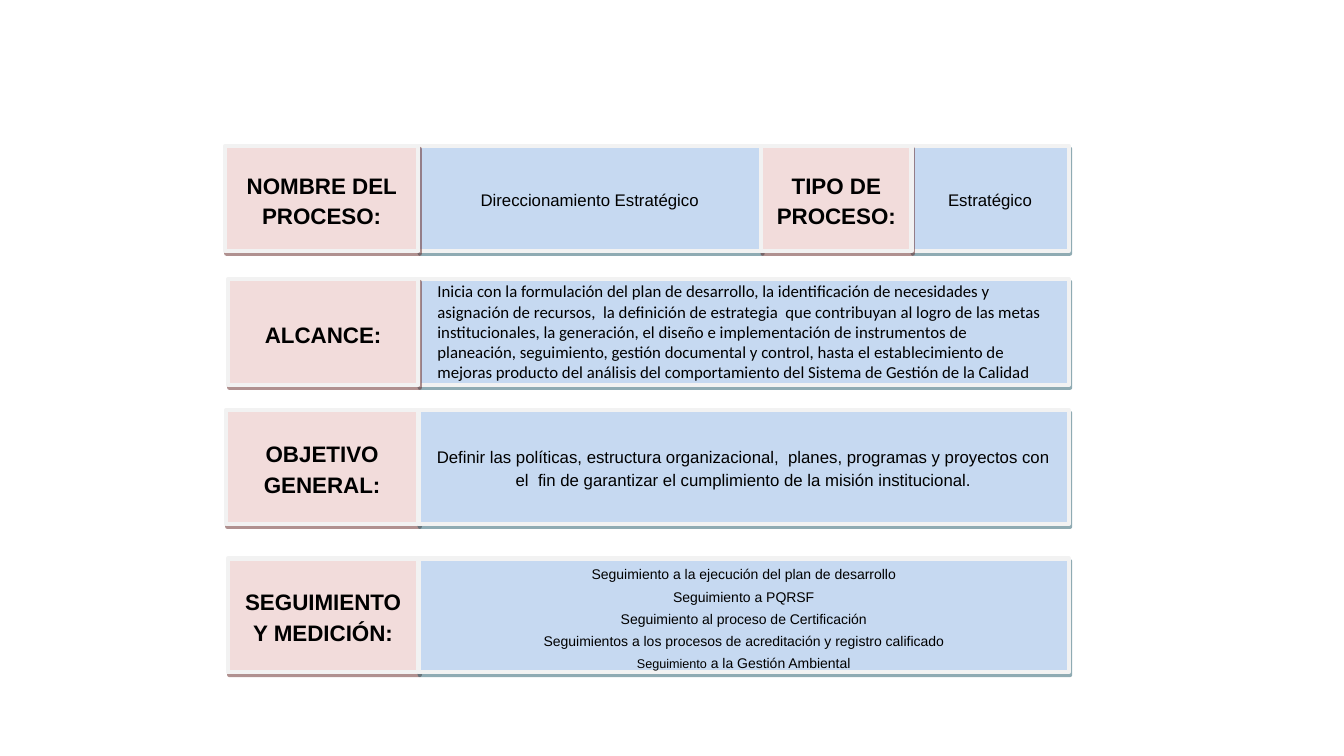
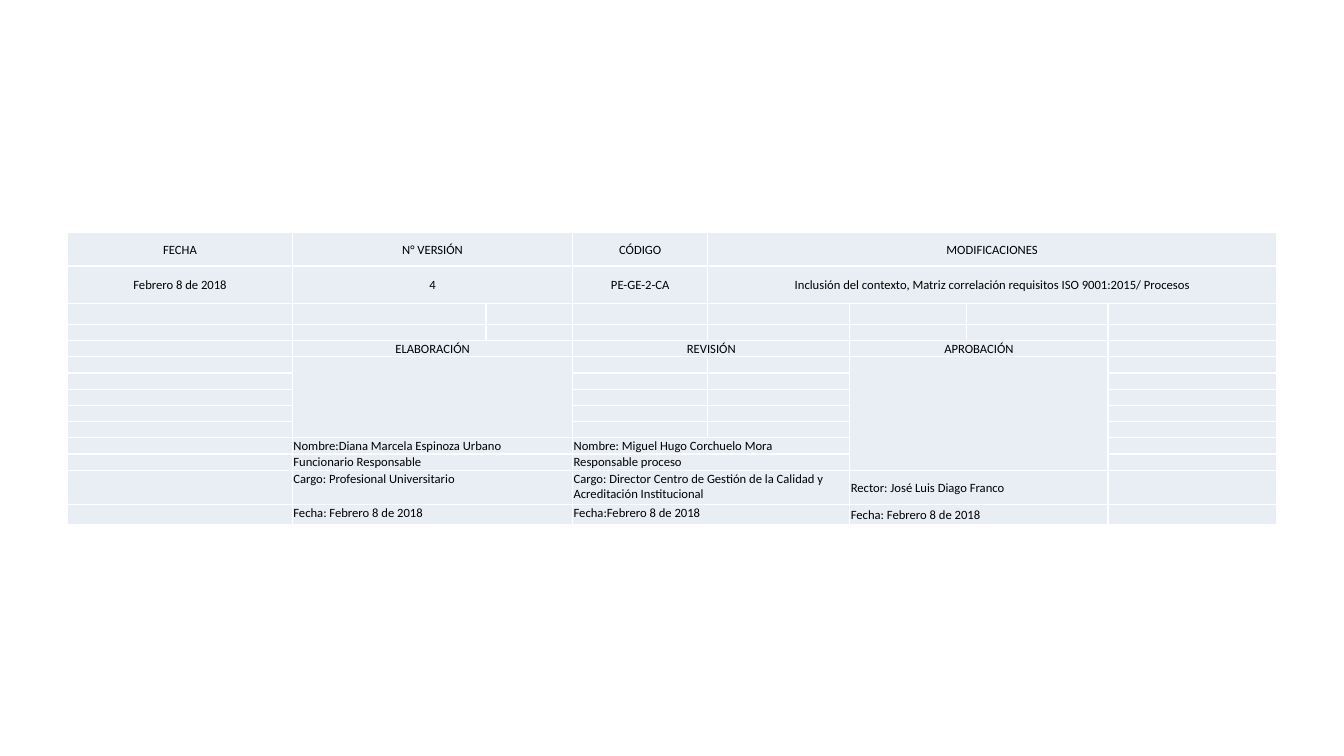
from dataclasses import dataclass

from lxml import etree
from pptx import Presentation
from pptx import util as u
from pptx.dml.color import RGBColor
from pptx.enum import shapes, text
from pptx.oxml import ns


@dataclass(frozen=True)
class Theme:
    ink: str = "000000"
    frame: str = "F2F2F2"
    label_fill: str = "F2DCDB"
    label_shadow: str = "632523"
    value_fill: str = "C6D9F1"
    value_shadow: str = "215968"
    cell_fill: str = "E9EDF4"
    cell_border: str = "FFFFFF"
    card_font: str = "Arial"
    body_font: str = "Calibri"
    label_size: float = 16
    value_size: float = 12
    list_size: float = 10
    small_size: float = 9
    card_spacing: float = 1.15


THEME = Theme()
CENTER, LEFT = text.PP_ALIGN.CENTER, text.PP_ALIGN.LEFT
MIDDLE, TOP = text.MSO_ANCHOR.MIDDLE, text.MSO_ANCHOR.TOP

# Process card grid: column edges, and top and height of each row, in inches
VALUE_LEFT, TYPE_LEFT, TYPE_VALUE_LEFT, CARD_RIGHT = 4.15, 7.55, 9.04, 10.6
NAME, SCOPE, GOAL, FOLLOW_UP = (1.45, 1.04), (2.77, 1.05), (4.07, 1.13), (5.54, 1.13)

SCOPE_TEXT = (
    "Inicia con la formulación del plan de desarrollo, la identificación de "
    "necesidades y asignación de recursos,  la definición de estrategia  que "
    "contribuyan al logro de las metas institucionales, la generación, el diseño "
    "e implementación de instrumentos de planeación, seguimiento, gestión "
    "documental y control, hasta el establecimiento de mejoras producto del "
    "análisis del comportamiento del Sistema de Gestión de la Calidad"
)
GOAL_TEXT = (
    "Definir las políticas, estructura organizacional,  planes, programas y "
    "proyectos con el  fin de garantizar el cumplimiento de la misión institucional."
)
FOLLOW_UP_LINES = [
    "Seguimiento a la ejecución del plan de desarrollo",
    "Seguimiento a PQRSF",
    "Seguimiento al proceso de Certificación",
    "Seguimientos a los procesos de acreditación y registro calificado",
]

# Version table: sizes in inches
TABLE_LEFT, TABLE_TOP = 0.67, 2.31
COLUMNS = [2.23, 1.92, 0.86, 1.34, 1.41, 1.16, 1.4, 1.67]
ROWS = [0.33, 0.37, 0.21] + [0.15] * 9 + [0.34, 0.2]

# Columns of the table where each block starts
DATE, PREPARED, REVIEWED, CHANGES, APPROVED = 0, 1, 3, 4, 5

# Version entries: row, column, columns spanned, wording
VERSION_ENTRIES = [
    (0, DATE, 1, "FECHA"),
    (0, PREPARED, 2, "N° VERSIÓN"),
    (0, REVIEWED, 1, "CÓDIGO"),
    (0, CHANGES, 4, "MODIFICACIONES"),
    (1, DATE, 1, "Febrero 8 de 2018"),
    (1, PREPARED, 2, "4"),
    (1, REVIEWED, 1, "PE-GE-2-CA"),
    (1, CHANGES, 4, "Inclusión del contexto, Matriz correlación requisitos "
                    "ISO 9001:2015/ Procesos"),
]
# Sign-off blocks: column, heading, rows left for the signature, lines below it
SIGN_OFFS = [
    (PREPARED, "ELABORACIÓN", 5, [
        "Nombre:Diana Marcela Espinoza Urbano", "Funcionario Responsable",
        "Cargo: Profesional Universitario", "Fecha: Febrero 8 de 2018"]),
    (REVIEWED, "REVISIÓN", 0, [
        "Nombre: Miguel Hugo Corchuelo Mora", "Responsable proceso",
        "Cargo: Director Centro de Gestión de la Calidad y Acreditación Institucional",
        "Fecha:Febrero 8 de 2018"]),
    (APPROVED, "APROBACIÓN", 7, [
        "Rector: José Luis Diago Franco", "Fecha: Febrero 8 de 2018"]),
]
SIGN_OFF_ROW = 4


def rgb(color):
    return RGBColor.from_string(color)


def add_color(parent, color, alpha=None):
    node = etree.SubElement(parent, ns.qn("a:srgbClr"), val=color)
    if alpha:
        etree.SubElement(node, ns.qn("a:alpha"), val=str(alpha * 1000))


def style_paragraph(paragraph, font, size, align=LEFT, bold=False):
    paragraph.alignment = align
    paragraph.font.name = font
    paragraph.font.size = u.Pt(size)
    paragraph.font.bold = bold
    paragraph.font.color.rgb = rgb(THEME.ink)


# Process card elements
def add_shadow(shape, color):
    shape.shadow.inherit = False
    effects = shape._element.spPr.find(ns.qn("a:effectLst"))
    shadow = etree.SubElement(
        effects, ns.qn("a:outerShdw"), blurRad="0", dist=str(u.Pt(2.2)),
        dir=str(63 * 60000), algn="ctr", rotWithShape="0")
    add_color(shadow, color, alpha=50)


def add_box(slide, left, right, row, fill, shadow):
    top, height = row
    box = slide.shapes.add_shape(
        shapes.MSO_SHAPE.RECTANGLE, u.Inches(left), u.Inches(top),
        u.Inches(right - left), u.Inches(height))
    box.fill.solid()
    box.fill.fore_color.rgb = rgb(fill)
    box.line.color.rgb = rgb(THEME.frame)
    box.line.width = u.Pt(3)
    add_shadow(box, shadow)
    return box.text_frame


def write_lines(frame, lines, size, bold=False):
    """Each line is a list of (wording, size) runs; None keeps the line's size."""
    for index, runs in enumerate(lines):
        paragraph = frame.paragraphs[0] if index == 0 else frame.add_paragraph()
        paragraph.line_spacing = THEME.card_spacing
        if index:
            paragraph.space_before = u.Pt(2)
        style_paragraph(paragraph, THEME.card_font, size, CENTER, bold)
        for wording, run_size in runs:
            run = paragraph.add_run()
            run.text = wording
            if run_size:
                run.font.size = u.Pt(run_size)


def add_label(slide, left, right, row, wording):
    frame = add_box(slide, left, right, row, THEME.label_fill, THEME.label_shadow)
    write_lines(frame, [[(wording, None)]], THEME.label_size, bold=True)


def add_value(slide, left, right, row, wording=None):
    frame = add_box(slide, left, right, row, THEME.value_fill, THEME.value_shadow)
    if wording:
        write_lines(frame, [[(wording, None)]], THEME.value_size)
    return frame


def add_scope_text(slide):
    note = slide.shapes.add_textbox(
        u.Inches(4.24), u.Inches(2.74), u.Inches(6.27), u.Inches(1.11))
    note.text_frame.word_wrap = True
    paragraph = note.text_frame.paragraphs[0]
    paragraph.text = SCOPE_TEXT
    style_paragraph(paragraph, THEME.body_font, THEME.value_size)


def build_process_card(slide):
    # Scope and name rows: labels lie over the values
    add_value(slide, VALUE_LEFT, CARD_RIGHT, SCOPE)
    add_value(slide, TYPE_VALUE_LEFT, CARD_RIGHT, NAME, "Estratégico")
    add_value(slide, VALUE_LEFT, TYPE_LEFT, NAME, "Direccionamiento Estratégico")
    add_label(slide, 2.23, VALUE_LEFT, NAME, "NOMBRE DEL PROCESO:")
    add_label(slide, TYPE_LEFT, TYPE_VALUE_LEFT, NAME, "TIPO DE PROCESO:")
    add_label(slide, 2.26, VALUE_LEFT, SCOPE, "ALCANCE:")
    # Goal and follow-up rows: values lie over the labels
    add_label(slide, 2.24, VALUE_LEFT, GOAL, "OBJETIVO GENERAL:")
    add_value(slide, VALUE_LEFT, CARD_RIGHT, GOAL, GOAL_TEXT)
    add_label(slide, 2.26, VALUE_LEFT, FOLLOW_UP, "SEGUIMIENTO Y MEDICIÓN:")
    follow_up = add_value(slide, VALUE_LEFT, CARD_RIGHT, FOLLOW_UP)
    follow_up.vertical_anchor = TOP
    lines = [[(line, None)] for line in FOLLOW_UP_LINES]
    lines.append([("Seguimiento", THEME.small_size), (" a la Gestión Ambiental", None)])
    write_lines(follow_up, lines, THEME.list_size)
    add_scope_text(slide)


# Version table elements
def add_borders(cell):
    properties = cell._tc.get_or_add_tcPr()
    for index, side in enumerate(("a:lnL", "a:lnR", "a:lnT", "a:lnB")):
        border = etree.Element(ns.qn(side), w=str(u.Pt(1)))
        add_color(etree.SubElement(border, ns.qn("a:solidFill")), THEME.cell_border)
        properties.insert(index, border)


def style_cell(cell):
    cell.fill.solid()
    cell.fill.fore_color.rgb = rgb(THEME.cell_fill)
    cell.margin_left = cell.margin_right = cell.margin_top = u.Inches(0.01)
    cell.margin_bottom = 0
    add_borders(cell)
    paragraph = cell.text_frame.paragraphs[0]
    style_paragraph(paragraph, THEME.body_font, THEME.small_size)
    # Small end mark keeps empty rows low
    etree.SubElement(paragraph._p, ns.qn("a:endParaRPr"),
                     sz=str(THEME.small_size * 100))


def span(table, row, column, height, width):
    cell = table.cell(row, column)
    if height * width > 1:
        cell.merge(table.cell(row + height - 1, column + width - 1))
    return cell


def write_cell(cell, wording, align=LEFT, anchor=TOP):
    paragraph = cell.text_frame.paragraphs[0]
    paragraph.add_run().text = wording
    paragraph.alignment = align
    cell.vertical_anchor = anchor


def add_sign_off(table, column, heading, signature_rows, lines):
    write_cell(span(table, SIGN_OFF_ROW, column, 1, 2), heading, CENTER)
    if signature_rows:
        span(table, SIGN_OFF_ROW + 1, column, signature_rows, 2)
    anchor = MIDDLE if column == APPROVED else TOP
    for row, line in enumerate(lines, len(ROWS) - len(lines)):
        write_cell(span(table, row, column, 1, 2), line, anchor=anchor)


def build_version_table(slide):
    table = slide.shapes.add_table(
        len(ROWS), len(COLUMNS), u.Inches(TABLE_LEFT), u.Inches(TABLE_TOP),
        u.Inches(sum(COLUMNS)), u.Inches(sum(ROWS))).table
    table.first_row = table.horz_banding = False
    for column, width in zip(table.columns, COLUMNS):
        column.width = u.Inches(width)
    for row, height in zip(table.rows, ROWS):
        row.height = u.Inches(height)
    for cell in table.iter_cells():
        style_cell(cell)
    for row, column, width, wording in VERSION_ENTRIES:
        write_cell(span(table, row, column, 1, width), wording, CENTER, MIDDLE)
    for sign_off in SIGN_OFFS:
        add_sign_off(table, *sign_off)


def main():
    deck = Presentation()
    deck.slide_width, deck.slide_height = u.Inches(13.33), u.Inches(7.5)
    blank = deck.slide_layouts[6]
    for build in (build_process_card, build_version_table):
        build(deck.slides.add_slide(blank))
    deck.save("out.pptx")


if __name__ == "__main__":
    main()
